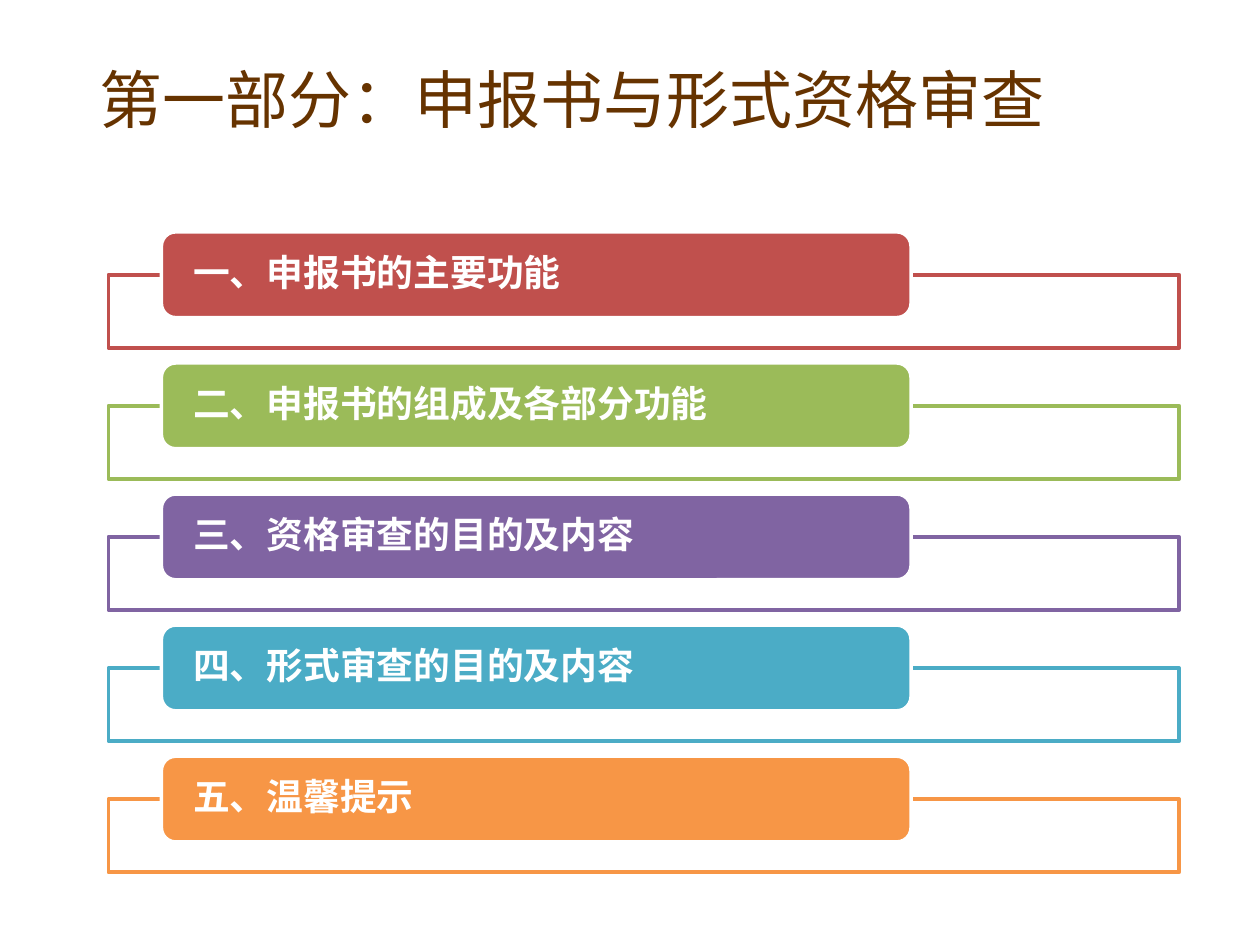
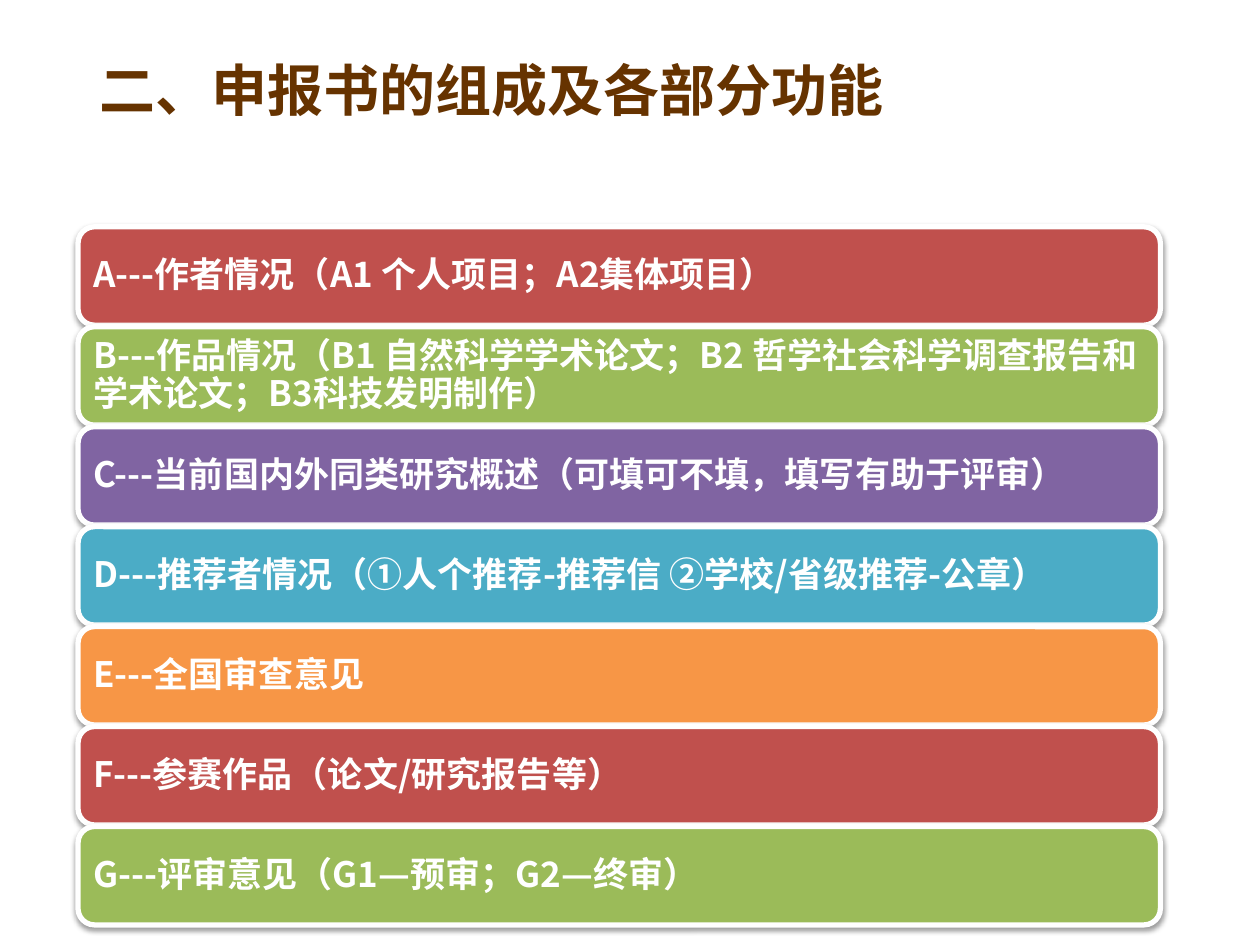
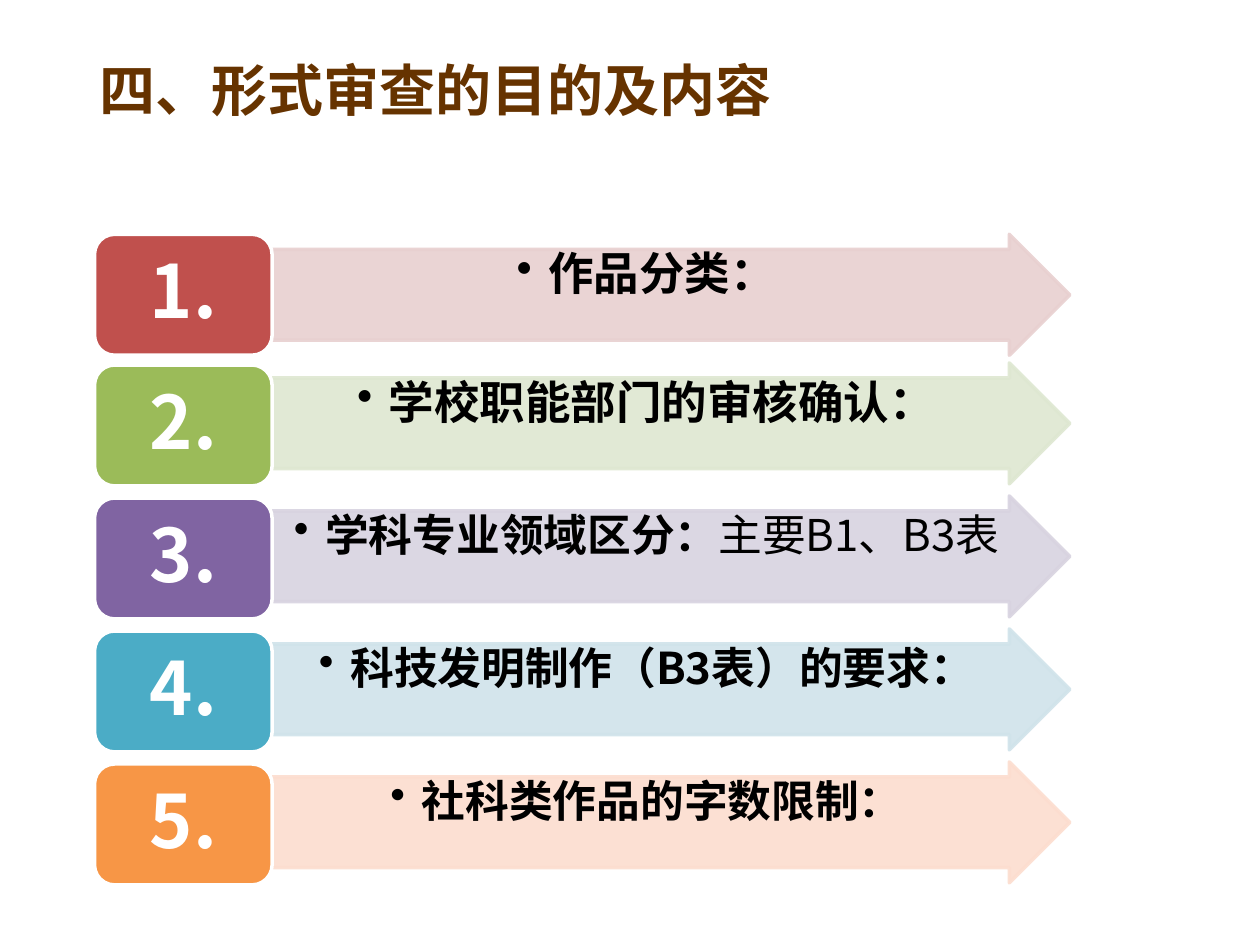
from dataclasses import dataclass

from lxml import etree
from pptx import Presentation
from pptx.dml.color import RGBColor
from pptx.enum.shapes import MSO_SHAPE
from pptx.enum.text import MSO_ANCHOR, MSO_AUTO_SIZE, PP_ALIGN
from pptx.oxml.ns import qn
from pptx.util import Pt

RECT = MSO_SHAPE.RECTANGLE
ROUNDED = MSO_SHAPE.ROUNDED_RECTANGLE
ARROW = MSO_SHAPE.RIGHT_ARROW
LEFT, CENTER = PP_ALIGN.LEFT, PP_ALIGN.CENTER
TOP, MIDDLE = MSO_ANCHOR.TOP, MSO_ANCHOR.MIDDLE
TITLE_ONLY = 5


@dataclass(frozen=True)
class Theme:
    title_font: str = "Noto Sans CJK SC"
    body_font: str = "Noto Sans CJK KR"
    title_color: str = "663300"
    white: str = "FFFFFF"
    black: str = "000000"
    accents: tuple = ("C0504D", "9BBB59", "8064A2", "4BACC6", "F79646")
    tints: tuple = ("E8D0D0", "DEE7D1", "D8D3E0", "D0E3EA", "FCDDCF")
    part_title: float = 36
    section_title: float = 32
    agenda: float = 21
    bar: float = 20
    number: float = 42
    point: float = 26
    point_small: float = 25

    def accent(self, i):
        return self.accents[i % len(self.accents)]


class Deck:
    def __init__(self, theme):
        self.theme = theme
        self.prs = Presentation()
        self.prs.slide_width, self.prs.slide_height = Pt(720), Pt(540)
        self.slide = None

    def add_slide(self, title, size, height, bold=True):
        self.slide = self.prs.slides.add_slide(self.prs.slide_layouts[TITLE_ONLY])
        sp = self.slide.shapes.title
        sp.left, sp.top, sp.width, sp.height = Pt(49.7), Pt(5.8), Pt(612), Pt(height)
        tf = sp.text_frame
        tf.text = title
        tf.auto_size = MSO_AUTO_SIZE.NONE
        tf.vertical_anchor = MIDDLE
        p = tf.paragraphs[0]
        p.alignment = LEFT
        self.style_run(p.runs[0], self.theme.title_font, size, self.theme.title_color, bold)

    def style_run(self, r, font, size, color, bold):
        r.font.size, r.font.bold, r.font.name = Pt(size), bold, font
        r.font.color.rgb = RGBColor.from_string(color)
        etree.SubElement(r.font._element, qn("a:ea"), typeface=font)

    def add_box(self, kind, box, fill, line, line_width=2):
        sp = self.slide.shapes.add_shape(kind, *(Pt(v) for v in box))
        sp.shadow.inherit = False
        sp.fill.solid()
        sp.fill.fore_color.rgb = RGBColor.from_string(fill)
        sp.line.color.rgb = RGBColor.from_string(line)
        sp.line.width = Pt(line_width)
        return sp

    def add_text(self, sp, texts, size, color, insets, align=LEFT, anchor=MIDDLE, bullet=False):
        tf = sp.text_frame
        tf.word_wrap = True
        tf.vertical_anchor = anchor
        tf.margin_left = tf.margin_right = Pt(insets[0])
        tf.margin_top = tf.margin_bottom = Pt(insets[1])
        tf.text = texts[0]
        p = tf.paragraphs[0]
        p.alignment = align
        p.line_spacing = 0.9
        if bullet:
            pPr = p._p.get_or_add_pPr()
            pPr.set("marL", str(Pt(18)))
            pPr.set("indent", str(Pt(-18)))
            etree.SubElement(pPr, qn("a:buChar"), char="•")
        for text in texts[1:]:
            p.add_run().text = text
        for i, r in enumerate(p.runs):
            self.style_run(r, self.theme.body_font, size, color, i == 0)

    def set_alpha(self, sp, percent, with_line=False):
        colors = [sp.fill._xPr.find(qn("a:solidFill"))[0]]
        if with_line:
            colors.append(sp.line._ln.find(qn("a:solidFill"))[0])
        for color in colors:
            etree.SubElement(color, qn("a:alpha"), val=str(percent * 1000))

    def add_shadow(self, sp):
        effects = sp._element.spPr.find(qn("a:effectLst"))
        shadow = etree.SubElement(effects, qn("a:outerShdw"), blurRad=str(Pt(3.1)),
                                  dist=str(Pt(1.6)), dir="5400000", rotWithShape="0")
        color = etree.SubElement(shadow, qn("a:srgbClr"), val=self.theme.black)
        etree.SubElement(color, qn("a:alpha"), val="38000")

    def add_agenda_item(self, i, text):
        t = self.theme
        top = 132.5 + 74.9 * i
        frame = self.add_box(RECT, (61.9, top + 24.5, 612, 41.8), t.white, t.accent(i))
        self.set_alpha(frame, 90)
        label = self.add_box(ROUNDED, (92.2, top, 428.4, 49), t.accent(i), t.white)
        self.add_text(label, [text], t.agenda, t.white, (15.8, 0))

    def add_bar(self, i, text):
        t = self.theme
        sp = self.add_box(ROUNDED, (44.6, 129.6 + 57.12 * i, 618.5, 56.2), t.accent(i), t.white, 3)
        self.add_shadow(sp)
        self.add_text(sp, [text], t.bar, t.white, (6, 6))

    def add_numbered_arrow(self, i, size, texts):
        t = self.theme
        first_top = 133.9
        arrow_top = max(first_top, 131.4 + 76 * i)
        badge_top = max(first_top, 132.6 + 76 * i)
        arrow = self.add_box(ARROW, (153.4, arrow_top, 457.9, 69.1), t.tints[i], t.tints[i])
        arrow.adjustments[0], arrow.adjustments[1] = 0.75, 0.5
        self.set_alpha(arrow, 90, with_line=True)
        self.add_text(arrow, texts, size, t.black, (1.3, 1.3), CENTER, TOP, bullet=True)
        badge = self.add_box(ROUNDED, (54, badge_top, 101.5, 69.1), t.accent(i), t.white)
        self.add_text(badge, [f"{i + 1}."], t.number, t.white, (12.2, 6.5), CENTER)


AGENDA = [
    "一、申报书的主要功能",
    "二、申报书的组成及各部分功能",
    "三、资格审查的目的及内容",
    "四、形式审查的目的及内容",
    "五、温馨提示",
]

FORM_PARTS = [
    "A---作者情况（A1 个人项目；A2集体项目）",
    "B---作品情况（B1 自然科学学术论文；B2 哲学社会科学调查报告和学术论文；B3科技发明制作）",
    "C---当前国内外同类研究概述（可填可不填，填写有助于评审）",
    "D---推荐者情况（①人个推荐-推荐信 ②学校/省级推荐-公章）",
    "E---全国审查意见",
    "F---参赛作品（论文/研究报告等）",
    "G---评审意见（G1—预审；G2—终审）",
]


def main():
    theme = Theme()
    deck = Deck(theme)

    deck.add_slide("第一部分：申报书与形式资格审查", theme.part_title, 100.8, bold=False)
    for i, text in enumerate(AGENDA):
        deck.add_agenda_item(i, text)

    deck.add_slide(AGENDA[1], theme.section_title, 90)
    for i, text in enumerate(FORM_PARTS):
        deck.add_bar(i, text)

    review_points = [
        (theme.point, ["作品分类："]),
        (theme.point, ["学校职能部门的审核确认："]),
        (theme.point_small, ["学科专业领域区分：", "主要B1、B3表"]),
        (theme.point_small, ["科技发明制作（B3表）的要求："]),
        (theme.point_small, ["社科类作品的字数限制："]),
    ]
    deck.add_slide(AGENDA[3], theme.section_title, 90)
    for i, (size, texts) in enumerate(review_points):
        deck.add_numbered_arrow(i, size, texts)

    deck.prs.save("out.pptx")


if __name__ == "__main__":
    main()
